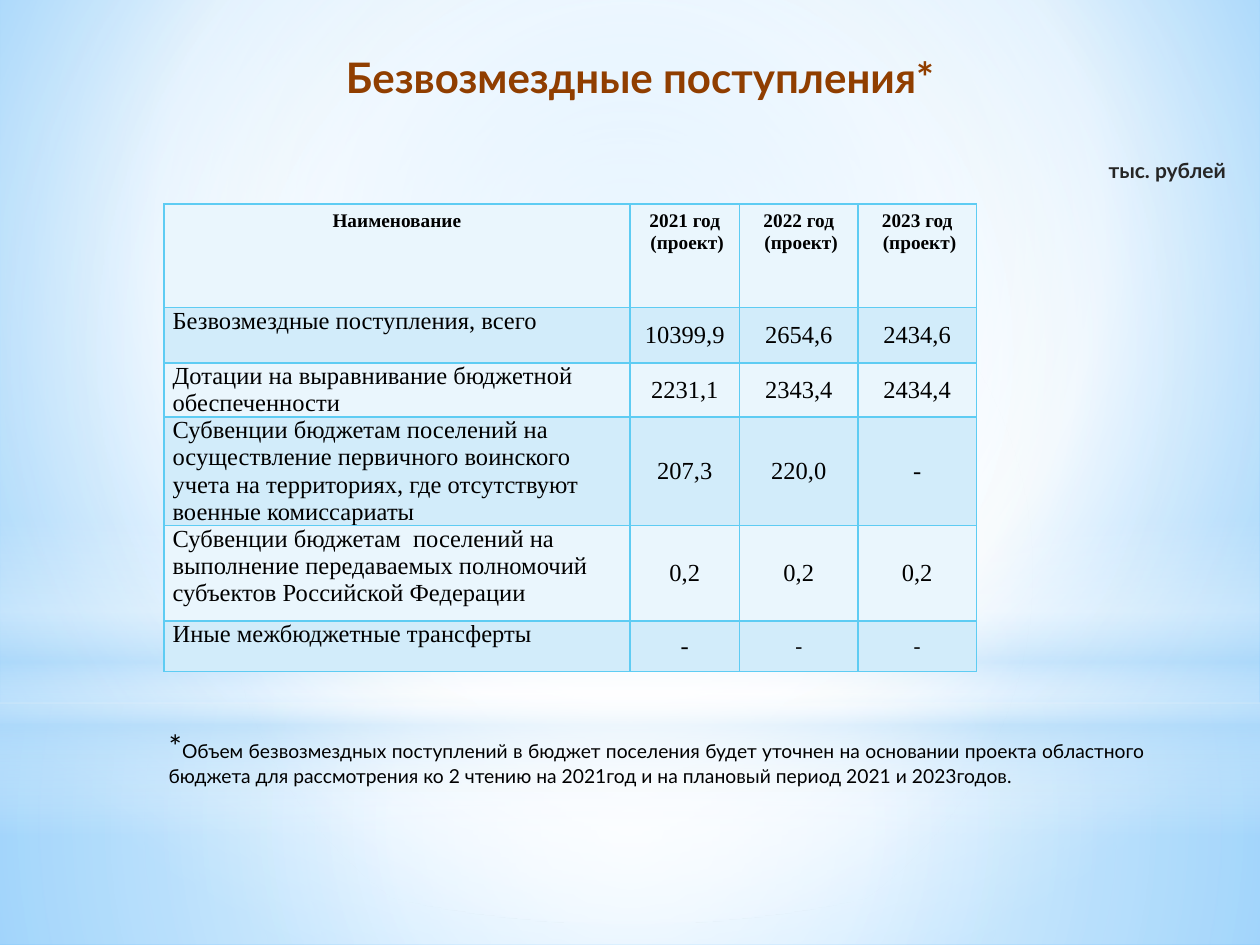
from pptx import Presentation
from pptx.dml.color import RGBColor
from pptx.enum.shapes import MSO_SHAPE as Shape
from pptx.enum.text import MSO_ANCHOR as Anchor, MSO_AUTO_SIZE as AutoSize, PP_ALIGN as Align
from pptx.oxml import parse_xml
from pptx.oxml.ns import nsdecls
from pptx.util import Inches, Pt

WIDTH, HEIGHT = 10, 7.5
BROWN = RGBColor(0x90, 0x3E, 0x00)
DARK = RGBColor(0x26, 0x26, 0x26)
BLACK = RGBColor(0, 0, 0)
WHITE = RGBColor(0xFF, 0xFF, 0xFF)
ICE = RGBColor(0xB4, 0xDC, 0xFA)
SKY = RGBColor(0x9E, 0xD5, 0xFF)
AZURE = RGBColor(0x5B, 0xB9, 0xFF)
BORDER = RGBColor(0x5E, 0xCC, 0xF3)
BANDS = RGBColor(0xEA, 0xF6, 0xFD), RGBColor(0xD2, 0xEC, 0xFA)
SANS, SERIF = "Lato", "Times New Roman"

CENTER = (50, 50, 50, 50)
GLOWS = [  # preset, top and height as shares of the slide, stops, focus (None: vertical)
    (Shape.RECTANGLE, 0.744, 0.256,
     [(0, WHITE, 91), (37, WHITE, 76), (100, ICE, 79)], CENTER),
    (Shape.RECTANGLE, 0, 0.744,
     [(0, WHITE, 89), (48, WHITE, 62), (100, ICE, 79)], CENTER),
    (Shape.RECTANGLE, 0.55, 0.333,
     [(0, WHITE, 0), (29, WHITE, 30), (45, ICE, 40), (55, WHITE, 26),
      (65, ICE, 60), (100, WHITE, 0)], None),
    (Shape.OVAL, 0.233, 0.744, [(0, WHITE, 100), (56, WHITE, 0)], CENTER),
]

COLUMNS = [3.7, 0.87, 0.94, 0.94]
ROWS = [0.82, 0.44, 0.43, 0.85, 0.76, 0.4]
HEADER = ["Наименование"] + [f"{year} год\n (проект)" for year in (2021, 2022, 2023)]
INCOME = [
    ("Безвозмездные поступления, всего", "10399,9", "2654,6", "2434,6"),
    ("Дотации на выравнивание бюджетной обеспеченности", "2231,1", "2343,4", "2434,4"),
    ("Субвенции бюджетам поселений на  осуществление первичного воинского учета "
     "на территориях, где отсутствуют военные комиссариаты", "207,3", "220,0", "-"),
    ("Субвенции бюджетам  поселений на выполнение передаваемых полномочий "
     "субъектов Российской Федерации", "0,2", "0,2", "0,2"),
    ("Иные межбюджетные трансферты", "-", "-", "-"),
]


def set_gradient(fill, owner, stops, focus):
    """Give owner, the XML parent of fill, a gradient with transparent stops."""
    fill.solid()
    marks = "".join(
        f'<a:gs pos="{pos * 1000}"><a:srgbClr val="{color}">'
        f'<a:alpha val="{alpha * 1000}"/></a:srgbClr></a:gs>'
        for pos, color, alpha in stops)
    if focus:
        sides = " ".join(f'{side}="{share * 1000}"' for side, share in zip("ltrb", focus))
        course = f'<a:path path="circle"><a:fillToRect {sides}/></a:path>'
    else:
        course = '<a:lin ang="5400000" scaled="0"/>'
    gradient = parse_xml(f'<a:gradFill {nsdecls("a")} rotWithShape="1">'
                         f'<a:gsLst>{marks}</a:gsLst>{course}</a:gradFill>')
    solid = owner.xpath("./a:solidFill")[0]
    owner.replace(solid, gradient)


def add_glow(page, preset, top, height, stops, focus):
    glow = page.shapes.add_shape(preset, 0, Inches(top * HEIGHT),
                                 Inches(WIDTH), Inches(height * HEIGHT))
    glow.shadow.inherit = False
    glow.line.fill.background()
    set_gradient(glow.fill, glow.element.spPr, stops, focus)


def add_span(para, text, size, font, color, bold=False):
    span = para.add_run()
    span.text = text
    span.font.size, span.font.name, span.font.bold = Pt(size), font, bold
    span.font.color.rgb = color


def fill_placeholder(box, at, text, size, color, align):
    box.left, box.top, box.width, box.height = map(Inches, at)
    frame = box.text_frame
    frame.auto_size, frame.vertical_anchor = AutoSize.NONE, Anchor.TOP
    para = frame.paragraphs[0]
    para.alignment = align
    para.space_before = Pt(0)
    add_span(para, text, size, SANS, color, bold=True)
    return para


def remove_bullet(para):
    props = para._p.get_or_add_pPr()
    props.set("marL", "0")
    props.set("indent", "0")
    props.append(parse_xml(f'<a:buNone {nsdecls("a")}/>'))


def set_borders(cell):
    props = cell._tc.get_or_add_tcPr()
    for place, side in enumerate("LRTB"):
        props.insert(place, parse_xml(
            f'<a:ln{side} {nsdecls("a")} w="12700"><a:solidFill>'
            f'<a:srgbClr val="{BORDER}"/></a:solidFill></a:ln{side}>'))


def fill_cell(cell, text, row, column):
    header, label = row == 0, column == 0
    cell.fill.solid()
    cell.fill.fore_color.rgb = BANDS[row % 2]
    set_borders(cell)
    if not header:
        cell.vertical_anchor = Anchor.TOP if label else Anchor.MIDDLE
        if column < 2:
            cell.margin_left = cell.margin_right = Inches(0.07)
            cell.margin_top = cell.margin_bottom = 0
    small_dash = row == len(INCOME) and column > 1
    size = 11 if header else 12 if small_dash else 14
    frame = cell.text_frame
    for index, line in enumerate(text.split("\n")):
        para = frame.add_paragraph() if index else frame.paragraphs[0]
        para.alignment = Align.LEFT if label and not header else Align.CENTER
        add_span(para, line, size, SERIF, BLACK, bold=header)


def add_income_table(page):
    table = page.shapes.add_table(len(ROWS), len(COLUMNS), Inches(1.3), Inches(1.62),
                                  Inches(sum(COLUMNS)), Inches(sum(ROWS))).table
    for column, width in zip(table.columns, COLUMNS):
        column.width = Inches(width)
    for row, height in zip(table.rows, ROWS):
        row.height = Inches(height)
    for r, texts in enumerate([HEADER, *INCOME]):
        for c, text in enumerate(texts):
            fill_cell(table.cell(r, c), text, r, c)


def add_footnote(page):
    box = page.shapes.add_textbox(Inches(1.24), Inches(5.72), Inches(7.95), Inches(0.59))
    box.text_frame.word_wrap = True
    para = box.text_frame.paragraphs[0]
    para.alignment = Align.JUSTIFY
    add_span(para, "*", 18, SANS, BLACK)
    add_span(para, "Объем безвозмездных поступлений в бюджет поселения будет уточнен на "
             "основании проекта областного бюджета для рассмотрения ко 2 чтению на 2021год "
             "и на плановый период 2021 и 2023годов.", 11, SANS, BLACK)


def main():
    deck = Presentation()
    deck.slide_width, deck.slide_height = Inches(WIDTH), Inches(HEIGHT)
    page = deck.slides.add_slide(deck.slide_layouts[1])
    title, body = page.placeholders

    backdrop = page.background.fill
    backdrop.solid()
    set_gradient(backdrop, page.element.xpath(".//p:bgPr")[0],
                 [(0, SKY, 100), (60, WHITE, 100), (100, AZURE, 100)], (20, 10, 20, 60))
    for glow in GLOWS:
        add_glow(page, *glow)
    for box in (title, body):  # bring the text in front of the glows
        page.shapes.element.append(box.element)

    fill_placeholder(title, (0.33, 0.36, 9.5, 0.63), "Безвозмездные поступления*",
                     24, BROWN, Align.CENTER)
    unit = fill_placeholder(body, (0.33, 1.2, 9.5, 5.45), "тыс. рублей",
                            12, DARK, Align.RIGHT)
    remove_bullet(unit)
    add_income_table(page)
    add_footnote(page)
    deck.save("out.pptx")


if __name__ == "__main__":
    main()
